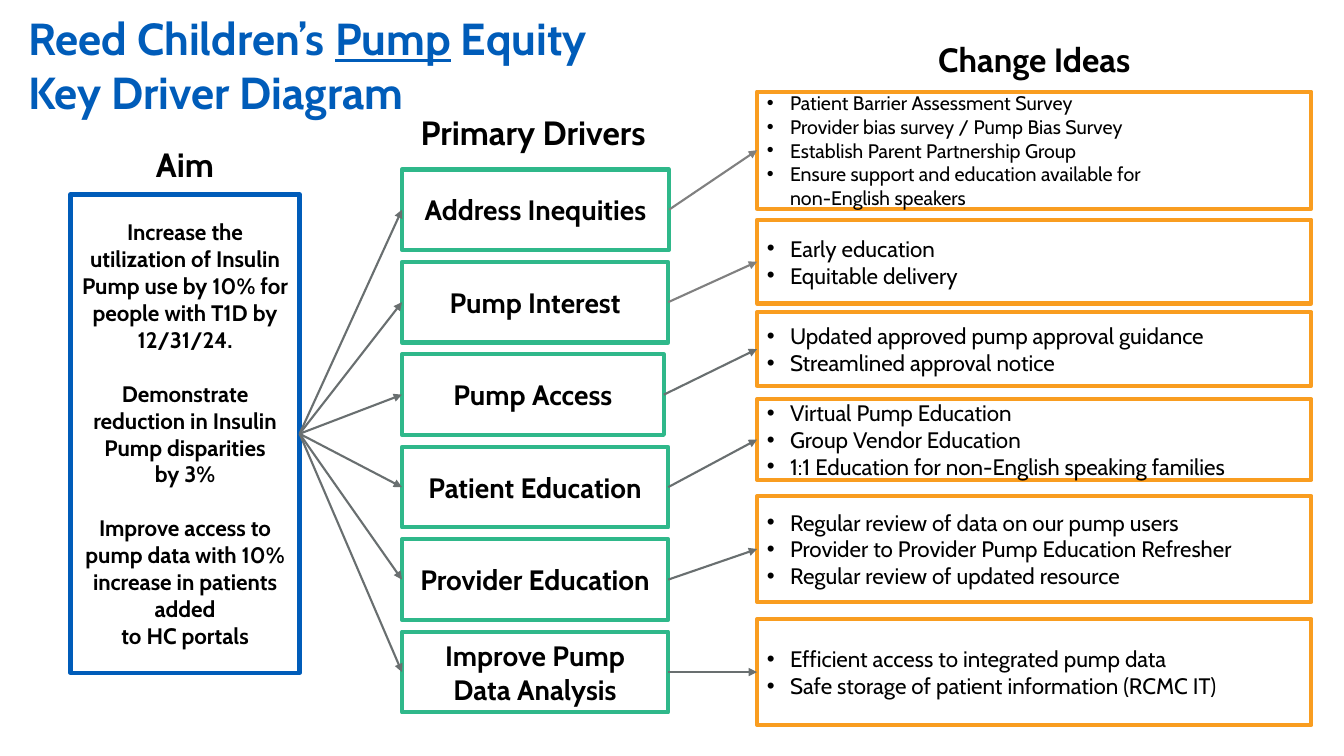
import dataclasses
import typing

import pptx
import pptx.dml.color
import pptx.enum.shapes
import pptx.enum.text
import pptx.oxml
import pptx.oxml.ns
import pptx.util

Cm = pptx.util.Cm
Pt = pptx.util.Pt
ALIGN = pptx.enum.text.PP_ALIGN
ANCHOR = pptx.enum.text.MSO_ANCHOR
FONT = "Cabin"
HUES = {
    "blue": "005CB9", "green": "2FB88A", "gold": "F99D20",
    "slate": "696F70", "gray": "808080", "black": "000000",
}


@dataclasses.dataclass
class Box:
    left: float
    top: float
    width: float
    height: float
    lines: list[str]
    size: float
    hue: str = ""  # outline; empty means a plain text box
    bold: bool = True
    bullet: bool = False
    gap: float = 0  # points before each later paragraph

    @property
    def right(self) -> float:
        return self.left + self.width

    @property
    def mid(self) -> float:
        return self.top + self.height / 2


class Driver(typing.NamedTuple):
    lines: list[str]
    width: float
    hue: str


class Change(typing.NamedTuple):
    top: float
    height: float
    size: float
    lines: list[str]


# Headings and aim
HEADS = [
    Box(3.1, 3.51, 3.12, 1.27, ["Aim"], 24),
    Box(10.03, 2.69, 6.81, 1.27, ["Primary Drivers"], 24),
    Box(19.08, 0.86, 13.97, 1.27, ["Change Ideas"], 24),
]
AIM = Box(1.78, 4.9, 5.77, 12.06, [
    "Increase the utilization of Insulin Pump use by 10% for people with T1D by 12/31/24.",
    "Demonstrate reduction in Insulin Pump disparities\nby 3%",
    "Improve access to pump data with 10% increase in patients added\nto HC portals",
], 16, "blue", gap=19.4)

# Drivers, each with the change ideas on its row
DRIVERS = [
    Driver(["Address Inequities"], 6.73, "gray"),
    Driver(["Pump Interest"], 6.71, "gray"),
    Driver(["Pump Access"], 6.6, "slate"),
    Driver(["Patient Education"], 6.71, "slate"),
    Driver(["Provider Education"], 6.71, "slate"),
    Driver(["Improve Pump", "Data Analysis"], 6.71, "slate"),
]
CHANGES = [
    Change(2.31, 2.95, 14, [
        "Patient Barrier Assessment Survey",
        "Provider bias survey / Pump Bias Survey",
        "Establish Parent Partnership Group",
        "Ensure support and education available for\nnon-English speakers",
    ]),
    Change(5.54, 2.11, 16, ["Early education", "Equitable delivery"]),
    Change(7.87, 1.85, 16, [
        "Updated approved pump approval guidance",
        "Streamlined approval notice",
    ]),
    Change(10.06, 2.03, 16, [
        "Virtual Pump Education",
        "Group Vendor Education",
        "1:1 Education for non-English speaking families",
    ]),
    Change(12.5, 2.67, 16, [
        "Regular review of data on our pump users",
        "Provider to Provider Pump Education Refresher",
        "Regular review of updated resource",
    ]),
    Change(15.6, 2.67, 16, [
        "Efficient access to integrated pump data",
        "Safe storage of patient information (RCMC IT)",
    ]),
]


def color(hue: str) -> pptx.dml.color.RGBColor:
    return pptx.dml.color.RGBColor.from_string(HUES[hue])


def add_tag(parent, tag: str, **attrs: str) -> None:
    node = pptx.oxml.parse_xml(f"<{tag} {pptx.oxml.ns.nsdecls('a')}/>")
    for key, value in attrs.items():
        node.set(key, value)
    parent.append(node)


def style(run, size: float, hue: str = "black", bold: bool = True) -> None:
    run.font.name = FONT
    run.font.size = Pt(size)
    run.font.bold = bold
    run.font.color.rgb = color(hue)


def draw_box(slide, box: Box) -> None:
    place = [Cm(n) for n in (box.left, box.top, box.width, box.height)]
    if box.hue:
        shape = slide.shapes.add_shape(
            pptx.enum.shapes.MSO_SHAPE.RECTANGLE, *place)
        shape.shadow.inherit = False
        shape.fill.background()
        shape.line.color.rgb = color(box.hue)
        shape.line.width = Pt(3)
    else:
        shape = slide.shapes.add_textbox(*place)
    frame = shape.text_frame
    frame.word_wrap = True
    frame.vertical_anchor = ANCHOR.MIDDLE if box.hue else ANCHOR.TOP
    for index, line in enumerate(box.lines):
        para = frame.add_paragraph() if index else frame.paragraphs[0]
        para.text = line
        para.alignment = ALIGN.LEFT if box.bullet else ALIGN.CENTER
        if index and box.gap:
            para.space_before = Pt(box.gap)
        if box.bullet:
            props = para._p.get_or_add_pPr()
            props.set("marL", str(Cm(0.58)))
            props.set("indent", str(-Cm(0.58)))
            add_tag(props, "a:buFont", typeface="Arial")
            add_tag(props, "a:buChar", char="•")
        for run in para.runs:
            style(run, box.size, bold=box.bold)


def draw_arrow(slide, start: Box, end: Box, hue: str) -> None:
    arrow = slide.shapes.add_connector(
        pptx.enum.shapes.MSO_CONNECTOR.STRAIGHT,
        Cm(start.right), Cm(start.mid), Cm(end.left), Cm(end.mid))
    arrow.line.color.rgb = color(hue)
    arrow.line.width = Pt(1.5)
    add_tag(arrow.line._get_or_add_ln(), "a:tailEnd", type="triangle")
    add_tag(arrow._element.spPr, "a:effectLst")


def draw_title(slide) -> None:
    title = slide.shapes.title
    title.left, title.top = Cm(0.71), Cm(0.28)
    title.width, title.height = Cm(17.27), Cm(2.59)
    frame = title.text_frame
    frame.auto_size = pptx.enum.text.MSO_AUTO_SIZE.NONE
    frame.word_wrap = True
    frame.vertical_anchor = ANCHOR.TOP
    frame.margin_left = frame.margin_right = 0
    frame.margin_top = frame.margin_bottom = 0
    para = frame.paragraphs[0]
    para.text = "Reed Children’s "
    para.alignment = ALIGN.LEFT
    para.line_spacing = 1.0
    pump = para.add_run()
    pump.text = "Pump"
    pump.font.underline = True
    para.add_run().text = " Equity"
    para.add_line_break()
    para.add_run().text = "Key Driver Diagram"
    for run in para.runs:
        style(run, 32, "blue")


def main() -> None:
    deck = pptx.Presentation()
    deck.slide_width, deck.slide_height = Cm(33.87), Cm(19.05)
    slide = deck.slides.add_slide(deck.slide_layouts[5])
    draw_title(slide)
    for box in [*HEADS, AIM]:
        draw_box(slide, box)

    # One row per driver: aim to driver to change ideas
    for row, (driver, change) in enumerate(zip(DRIVERS, CHANGES)):
        cause = Box(10.13, 4.27 + 2.33 * row, driver.width, 2.03,
                    driver.lines, 20, "green")
        ideas = Box(19.08, change.top, 13.97, change.height, change.lines,
                    change.size, "gold", bold=False, bullet=True)
        draw_box(slide, cause)
        draw_box(slide, ideas)
        draw_arrow(slide, AIM, cause, "slate")
        draw_arrow(slide, cause, ideas, driver.hue)
    deck.save("out.pptx")


if __name__ == "__main__":
    main()
